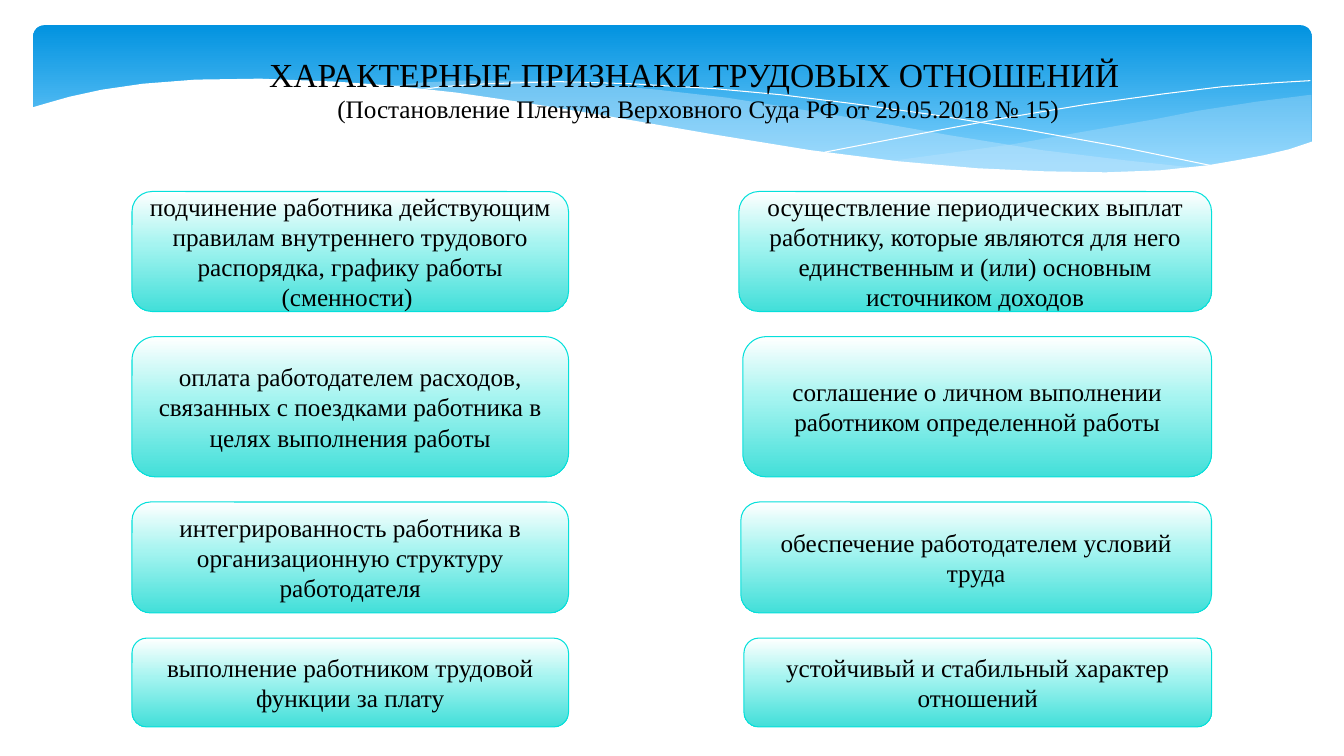
import copy
from dataclasses import dataclass
from typing import Optional

import lxml.etree
import pptx
import pptx.dml.color
import pptx.enum.shapes
import pptx.enum.text
import pptx.oxml.ns
import pptx.util

Pt = pptx.util.Pt
FONT = "Times New Roman"
COLOURS = {
    "text": "000000", "white": "FFFFFF", "haze": "C6E7FC",
    "banner_top": "0293E0", "banner_bottom": "83D3FE",
    "card_middle": "A5F4F0", "card_bottom": "42DFD9", "card_edge": "05E0DB",
}
BANNER_STOPS = [(0, "banner_top"), (0.9, "banner_bottom")]
CARD_STOPS = [(0, "white"), (0.44, "card_middle"), (1, "card_bottom")]


@dataclass
class Wave:
    points: list[tuple[float, float]]
    fill: Optional[str] = None  # an unfilled wave is a white hairline
    opacity: int = 100


@dataclass
class FeatureRow:
    height: float
    right_column_left: float
    left_text: str
    right_text: str


WAVES = [
    Wave([(936, 67.7), (897.1, 72.7), (855.4, 79.2), (825.8, 85), (772.6, 94.3),
          (723.6, 103), (677.5, 109.4), (635, 115.2), (676.8, 118.8), (715, 121.7),
          (749.5, 123.8), (791.3, 123.8), (828.7, 122.4), (861.1, 118.8),
          (891.4, 113.8), (911.5, 109.4), (936.7, 102.2), (936.7, 67.7)], "haze", 29),
    Wave([(856.8, 120.2), (803.5, 114.5), (744.5, 107.3), (677.5, 96.5), (604.1, 83.5),
          (560.2, 76.3), (519.1, 69.8), (469.4, 64.1), (424.1, 59.8), (383, 57.6),
          (330.5, 57.6), (301, 59), (275, 61.9), (310.3, 64.8), (347.8, 69.8),
          (388.1, 76.3), (431.3, 83.5), (508.3, 97.2), (560.9, 105.1), (609.1, 112.3),
          (653, 117.4), (693.4, 121), (730.1, 123.1), (774.7, 124.6),
          (814.3, 123.8)], "haze", 40),
    Wave([(296.6, 64.8), (315.4, 61.9), (348.5, 59.8), (399.6, 58.3), (450, 59.8),
          (511.2, 63.4), (558, 67.7), (610.6, 74.2), (667.4, 82.1), (730.1, 92.2),
          (797.8, 104.4), (871.2, 119.5)]),
    Wave([(589, 108.7), (626.4, 101.5), (667.4, 93.6), (717.8, 84.2), (774, 74.9),
          (831.6, 67), (873.4, 61.9), (912.2, 59), (936, 57.6)]),
    Wave([(938.2, 100.8), (920.9, 106.6), (902.9, 110.9), (883.4, 114.5), (862.6, 118.1),
          (828.7, 121.7), (789.8, 123.1), (746.6, 122.4), (697.7, 120.2), (641.5, 115.2),
          (578.9, 107.3), (508.3, 95.8), (429.1, 82.1), (375.1, 73.4), (326.2, 66.2),
          (280.8, 61.2), (239.8, 58.3), (185.8, 56.2), (139.7, 56.9), (102.2, 59.8),
          (72.7, 64.1), (49.7, 69.1), (34.6, 73.4), (22.3, 77), (22.3, 161.3),
          (938.2, 161.3)], "white"),
]

FEATURE_ROWS = [
    FeatureRow(85.7, 527.8,
               "подчинение работника действующим правилам внутреннего трудового "
               "распорядка, графику работы (сменности) ",
               "осуществление периодических выплат работнику, которые являются для него "
               "единственным и (или) основным источником доходов"),
    FeatureRow(100.1, 530.6,
               "оплата работодателем расходов, связанных с поездками работника в целях "
               "выполнения работы",
               "соглашение о личном выполнении работником определенной работы"),
    FeatureRow(79.2, 529.2,
               "интегрированность работника в организационную структуру работодателя",
               "обеспечение работодателем условий труда"),
    FeatureRow(63.4, 531.4,
               "выполнение работником трудовой функции за плату",
               "устойчивый и стабильный характер отношений"),
]
ROWS_TOP, ROW_GAP = 136.8, 18
LEFT_COLUMN, LEFT_COLUMN_WIDTH, RIGHT_EDGE = 94.3, 311.8, 865.4


def colour(name: str) -> pptx.dml.color.RGBColor:
    return pptx.dml.color.RGBColor.from_string(COLOURS[name])


def format_run(run, size: float) -> None:
    run.font.name = FONT
    run.font.size = Pt(size)
    run.font.color.rgb = colour("text")


def add_gradient_box(slide, left: float, top: float, width: float, height: float,
                     stops: list[tuple[float, str]]):
    box = slide.shapes.add_shape(pptx.enum.shapes.MSO_SHAPE.ROUNDED_RECTANGLE,
                                 Pt(left), Pt(top), Pt(width), Pt(height))
    box.shadow.inherit = False
    box.fill.gradient()
    box.fill.gradient_angle = 270
    stop_list = box._element.spPr.find(".//" + pptx.oxml.ns.qn("a:gsLst"))
    while len(stop_list) < len(stops):
        stop_list.append(copy.deepcopy(stop_list[-1]))
    for gradient_stop, (position, name) in zip(box.fill.gradient_stops, stops):
        gradient_stop.position = position
        gradient_stop.color.rgb = colour(name)
    return box


def add_wave(slide, wave: Wave) -> None:
    points = [(Pt(x), Pt(y)) for x, y in wave.points]
    builder = slide.shapes.build_freeform(*points[0])
    builder.add_line_segments(points[1:], close=wave.fill is not None)
    outline = builder.convert_to_shape()
    outline.shadow.inherit = False
    if wave.fill is None:
        outline.fill.background()
        outline.line.color.rgb = colour("white")
        outline.line.width = Pt(0)
        return
    outline.line.fill.background()
    outline.fill.solid()
    outline.fill.fore_color.rgb = colour(wave.fill)
    if wave.opacity < 100:
        fill_colour = outline._element.spPr.find(".//" + pptx.oxml.ns.qn("a:srgbClr"))
        alpha = lxml.etree.SubElement(fill_colour, pptx.oxml.ns.qn("a:alpha"))
        alpha.set("val", str(wave.opacity * 1000))


def add_feature(slide, left: float, top: float, width: float, height: float,
                text: str) -> None:
    card = add_gradient_box(slide, left, top, width, height, CARD_STOPS)
    card.line.color.rgb = colour("card_edge")
    card.line.width = Pt(0.75)
    card.text_frame.word_wrap = True
    card.text_frame.vertical_anchor = pptx.enum.text.MSO_ANCHOR.MIDDLE
    card.text_frame.text = text
    paragraph = card.text_frame.paragraphs[0]
    paragraph.alignment = pptx.enum.text.PP_ALIGN.CENTER
    format_run(paragraph.runs[0], 18)


def add_heading(slide) -> None:
    heading = slide.shapes.title
    heading.left, heading.top = Pt(66.2), Pt(31.7)
    heading.width, heading.height = Pt(865.4), Pt(79.2)
    frame = heading.text_frame
    frame.word_wrap = True
    frame.auto_size = pptx.enum.text.MSO_AUTO_SIZE.NONE
    frame.vertical_anchor = pptx.enum.text.MSO_ANCHOR.TOP
    frame.margin_top = Pt(6.5)
    paragraph = frame.paragraphs[0]
    paragraph.text = ("ХАРАКТЕРНЫЕ ПРИЗНАКИ ТРУДОВЫХ ОТНОШЕНИЙ \v"
                      "(Постановление Пленума Верховного Суда РФ от 29.05.2018 № 15)")
    paragraph.alignment = pptx.enum.text.PP_ALIGN.CENTER
    for run, size in zip(paragraph.runs, (24, 18)):
        format_run(run, size)
    # Bring the heading in front of the banner
    slide.shapes._spTree.append(heading._element)


def main() -> None:
    presentation = pptx.Presentation()
    presentation.slide_width, presentation.slide_height = Pt(960), Pt(540)
    slide = presentation.slides.add_slide(presentation.slide_layouts[5])

    # Banner with waves
    banner = add_gradient_box(slide, 23.8, 18, 913, 112.3, BANNER_STOPS)
    banner.adjustments[0] = 0.07
    banner.line.fill.background()
    for wave in WAVES:
        add_wave(slide, wave)

    add_heading(slide)

    # Two columns of features
    top = ROWS_TOP
    for row in FEATURE_ROWS:
        add_feature(slide, LEFT_COLUMN, top, LEFT_COLUMN_WIDTH, row.height, row.left_text)
        add_feature(slide, row.right_column_left, top, RIGHT_EDGE - row.right_column_left,
                    row.height, row.right_text)
        top += row.height + ROW_GAP

    presentation.save("out.pptx")


if __name__ == "__main__":
    main()
